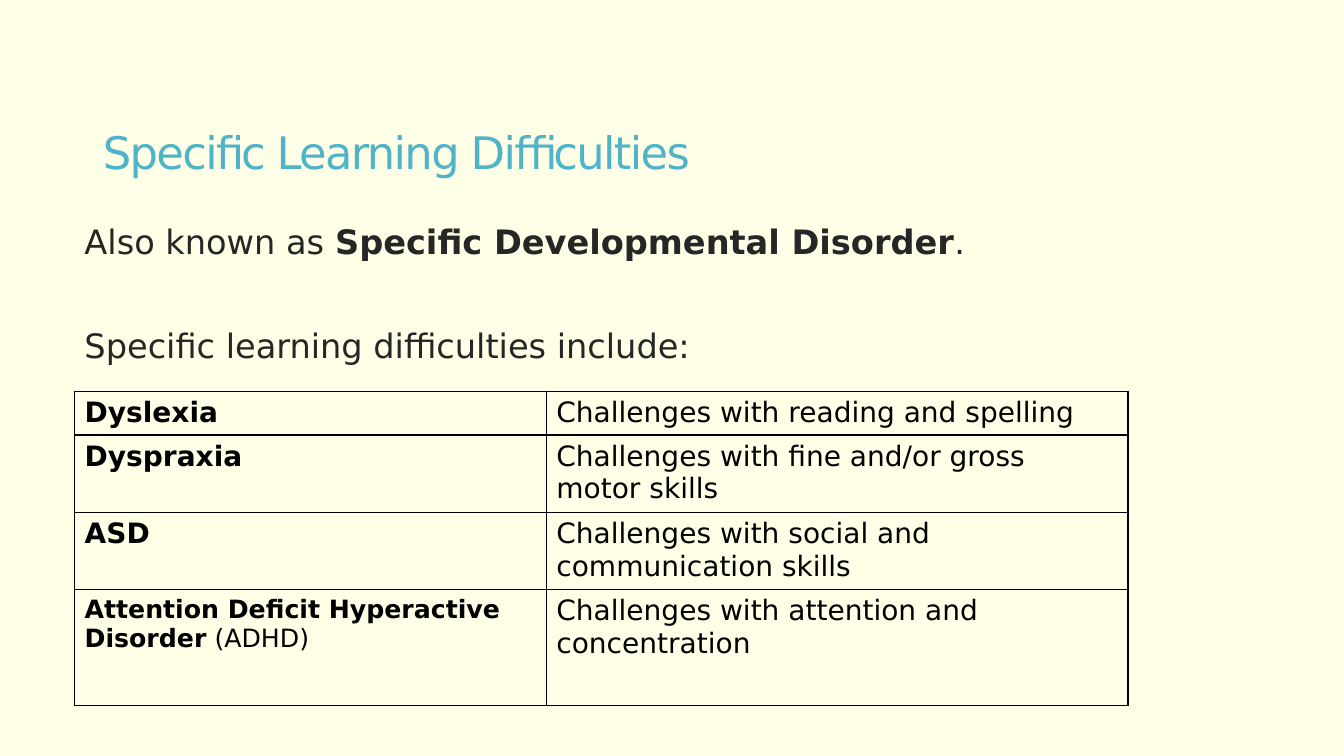
"""Build a slide that lists specific learning difficulties and their challenges."""
from lxml.etree import SubElement
from pptx import Presentation
from pptx.dml.color import RGBColor
from pptx.enum.text import MSO_ANCHOR, PP_ALIGN
from pptx.oxml.ns import qn
from pptx.util import Pt

FONT = "DejaVu Sans"
CREAM = RGBColor(0xFF, 0xFF, 0xE7)
TEAL = RGBColor(0x50, 0xB4, 0xC8)
CHARCOAL = RGBColor(0x26, 0x26, 0x26)
BLACK = RGBColor(0, 0, 0)

COLUMN_WIDTHS = (337, 415.5)
ROW_HEIGHTS = (30.5, 54, 54, 82.5)
DIFFICULTIES = [
    ([("Dyslexia", True)], 20, "Challenges with reading and spelling"),
    ([("Dyspraxia", True)], 20, "Challenges with fine and/or gross motor skills"),
    ([("ASD", True)], 20, "Challenges with social and communication skills"),
    ([("Attention Deficit Hyperactive Disorder", True), (" (ADHD)", False)], 18,
     "Challenges with attention and concentration"),
]


def add_runs(p, runs, size, color):
    for text, bold in runs:
        r = p.add_run()
        r.text = text
        r.font.name = FONT
        r.font.size = Pt(size)
        r.font.bold = bold
        r.font.color.rgb = color


def set_title(s, text):
    title = s.shapes.title
    title.left, title.top, title.width, title.height = Pt(66.25), Pt(60.5), Pt(840), Pt(101.5)
    tf = title.text_frame
    tf.word_wrap = True
    tf.vertical_anchor = MSO_ANCHOR.MIDDLE
    p = tf.paragraphs[0]
    p.alignment = PP_ALIGN.LEFT
    p.line_spacing = 0.85
    add_runs(p, [(text, False)], 32, TEAL)
    p.runs[0].font._element.set("spc", "-120")


def add_body(s, paragraphs):
    tf = s.shapes.add_textbox(Pt(53.25), Pt(158.5), Pt(846.75), Pt(296.5)).text_frame
    tf.word_wrap = True
    for i, (runs, space_before) in enumerate(paragraphs):
        p = tf.add_paragraph() if i else tf.paragraphs[0]
        p.line_spacing = 0.85
        p.space_before = Pt(space_before)
        add_runs(p, runs, 24, CHARCOAL)


def set_borders(cell):
    tc_pr = cell._tc.get_or_add_tcPr()
    for side in ("lnL", "lnR", "lnT", "lnB"):
        ln = SubElement(tc_pr, qn(f"a:{side}"), w=str(Pt(1)))
        fill = SubElement(ln, qn("a:solidFill"))
        SubElement(fill, qn("a:srgbClr"), val=str(BLACK))


def fill_cell(cell, runs, size):
    add_runs(cell.text_frame.paragraphs[0], runs, size, BLACK)
    set_borders(cell)
    cell.fill.background()


def add_difficulties_table(s):
    table = s.shapes.add_table(
        len(ROW_HEIGHTS), len(COLUMN_WIDTHS), Pt(53.25), Pt(279.5),
        Pt(sum(COLUMN_WIDTHS)), Pt(sum(ROW_HEIGHTS))).table
    table.first_row = False
    table.horz_banding = False
    for column, width in zip(table.columns, COLUMN_WIDTHS):
        column.width = Pt(width)
    for i, (height, (name, size, challenge)) in enumerate(zip(ROW_HEIGHTS, DIFFICULTIES)):
        table.rows[i].height = Pt(height)
        fill_cell(table.cell(i, 0), name, size)
        fill_cell(table.cell(i, 1), [(challenge, False)], 20)


def main():
    prs = Presentation()
    prs.slide_width, prs.slide_height = Pt(960), Pt(540)
    s = prs.slides.add_slide(prs.slide_layouts[5])
    s.background.fill.solid()
    s.background.fill.fore_color.rgb = CREAM
    set_title(s, "Specific Learning Difficulties")
    add_body(s, [
        ([("Also known as ", False), ("Specific Developmental Disorder", True), (".", False)], 13),
        ([("Specific learning difficulties include:", False)], 50),
    ])
    add_difficulties_table(s)
    prs.save("out.pptx")


if __name__ == "__main__":
    main()
